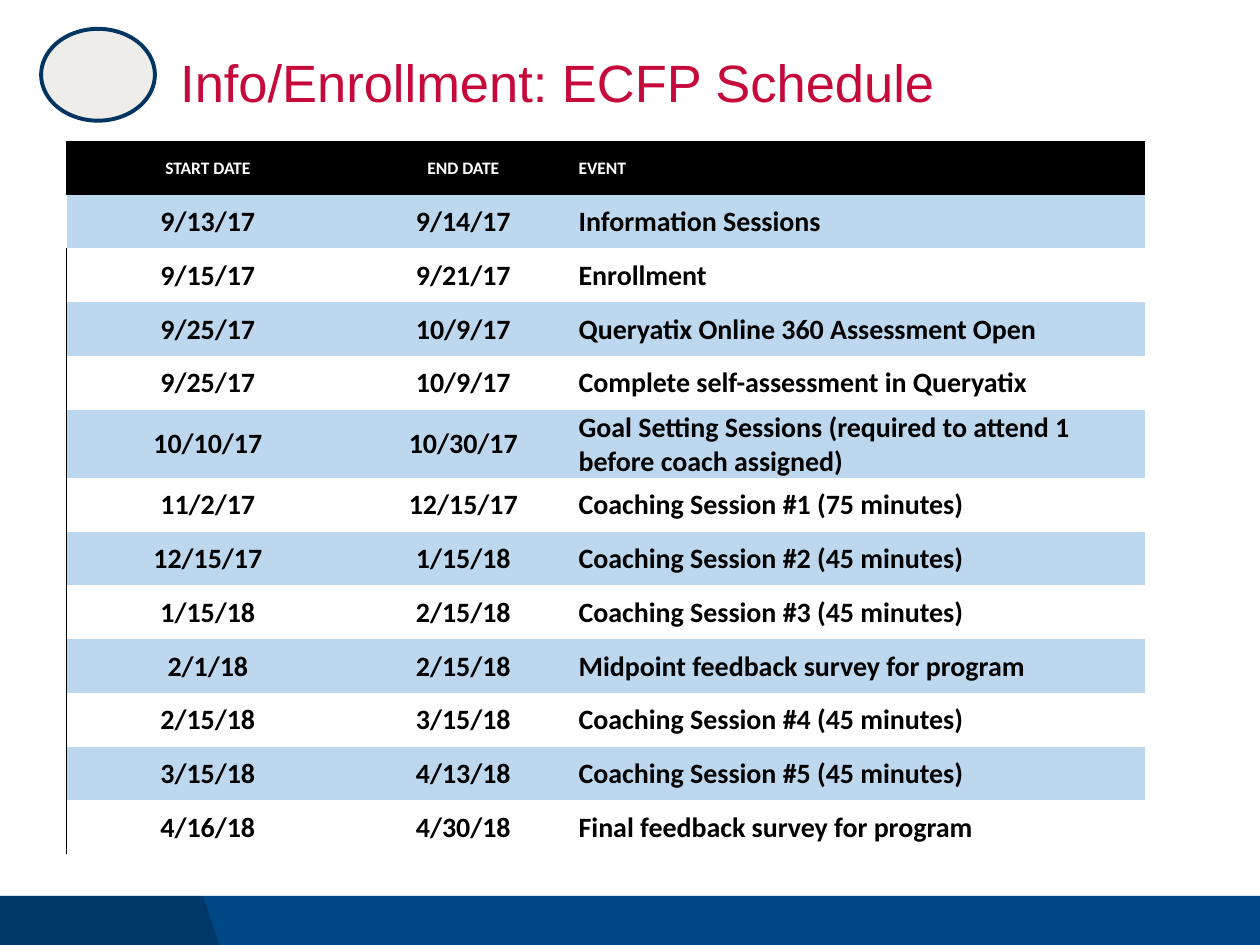
import pptx
import pptx.util
import pptx.dml.color
import pptx.enum.shapes
import pptx.enum.text
import pptx.oxml
import pptx.oxml.ns
from dataclasses import dataclass
from lxml import etree

Pt = pptx.util.Pt
Shape = pptx.enum.shapes.MSO_SHAPE
Align = pptx.enum.text.PP_ALIGN
Anchor = pptx.enum.text.MSO_ANCHOR
qn = pptx.oxml.ns.qn
PLAIN = "{2D5ABB26-0587-4C30-8999-92F81FD0307C}"  # no style, no grid


@dataclass(frozen=True)
class Theme:
    red: str = "C5093B"
    blue: str = "004785"
    navy: str = "003562"
    pale: str = "BDD7EE"
    cream: str = "EEEDEA"
    black: str = "000000"
    white: str = "FFFFFF"
    title: float = 30
    head: float = 10
    body: float = 16


def rgb(code):
    return pptx.dml.color.RGBColor.from_string(code)


def write(frame, text, *, size, color, font, bold=False, align=Align.LEFT, space=1.0):
    para = frame.paragraphs[0]
    para.alignment = align
    para.line_spacing = space
    run = para.add_run()
    run.text = text
    run.font.name = font
    run.font.size = Pt(size)
    run.font.bold = bold
    run.font.color.rgb = rgb(color)


class Deck:
    def __init__(self, theme, wide, high):
        self.theme = theme
        self.file = pptx.Presentation()
        self.file.slide_width, self.file.slide_height = Pt(wide), Pt(high)
        self.slide = self.file.slides.add_slide(self.file.slide_layouts[6])

    def paint(self, shape, fill, line=None, width=0, alpha=None):
        shape.shadow.inherit = False
        shape.fill.solid()
        shape.fill.fore_color.rgb = rgb(fill)
        if alpha is not None:
            tint = shape.fill._xPr.find(".//" + qn("a:srgbClr"))
            etree.SubElement(tint, qn("a:alpha"), val=str(alpha * 1000))
        if line:
            shape.line.color.rgb = rgb(line)
            shape.line.width = Pt(width)
        else:
            shape.line.fill.background()

    def shape(self, kind, box, fill, **look):
        item = self.slide.shapes.add_shape(kind, *map(Pt, box))
        self.paint(item, fill, **look)

    def outline(self, dots, fill, **look):
        first, *rest = [(Pt(x), Pt(y)) for x, y in dots]
        form = self.slide.shapes.build_freeform(*first)
        form.add_line_segments(rest, close=True)
        self.paint(form.convert_to_shape(), fill, **look)

    def text(self, box, words, **style):
        frame = self.slide.shapes.add_textbox(*map(Pt, box)).text_frame
        frame.word_wrap = True
        frame.margin_left = frame.margin_right = 0
        frame.vertical_anchor = Anchor.MIDDLE
        write(frame, words, **style)

    def edge(self, cell, color, width):
        line = etree.Element(qn("a:lnL"), w=str(Pt(width)))
        fill = etree.SubElement(line, qn("a:solidFill"))
        etree.SubElement(fill, qn("a:srgbClr"), val=color)
        cell._tc.get_or_add_tcPr().insert(0, line)

    def table(self, left, top, cols, high, rows):
        look = self.theme
        grid = self.slide.shapes.add_table(
            len(rows), len(cols), Pt(left), Pt(top), Pt(sum(cols)), Pt(high * len(rows))
        ).table
        grid.horz_banding = False
        grid._tbl.tblPr.find(qn("a:tableStyleId")).text = PLAIN
        for col, wide in zip(grid.columns, cols):
            col.width = Pt(wide)
        for r, row in enumerate(rows):
            grid.rows[r].height = Pt(high)
            for c, words in enumerate(row):
                cell = grid.cell(r, c)
                cell.vertical_anchor = Anchor.MIDDLE
                cell.margin_left = cell.margin_right = cell.margin_top = Pt(0.7)
                cell.margin_bottom = 0
                # Black header, then pale and clear rows in turn
                if r == 0 or r % 2:
                    cell.fill.solid()
                    cell.fill.fore_color.rgb = rgb(look.pale if r else look.black)
                else:
                    cell.fill.background()
                if c == 0 and r != 1:
                    self.edge(cell, look.black, 1)
                write(
                    cell.text_frame, words, font="Calibri", bold=True,
                    size=look.body if r else look.head,
                    color=look.black if r else look.white,
                    align=Align.LEFT if c == 2 else Align.CENTER,
                )


ROWS = [
    ("START DATE", "END DATE", "EVENT"),
    ("9/13/17", "9/14/17", "Information Sessions"),
    ("9/15/17", "9/21/17", "Enrollment"),
    ("9/25/17", "10/9/17", "Queryatix Online 360 Assessment Open"),
    ("9/25/17", "10/9/17", "Complete self-assessment in Queryatix"),
    ("10/10/17", "10/30/17",
     "Goal Setting Sessions (required to attend 1 before coach assigned)"),
    ("11/2/17", "12/15/17", "Coaching Session #1 (75 minutes)"),
    ("12/15/17", "1/15/18", "Coaching Session #2 (45 minutes)"),
    ("1/15/18", "2/15/18", "Coaching Session #3 (45 minutes)"),
    ("2/1/18", "2/15/18", "Midpoint feedback survey for program"),
    ("2/15/18", "3/15/18", "Coaching Session #4 (45 minutes)"),
    ("3/15/18", "4/13/18", "Coaching Session #5 (45 minutes)"),
    ("4/16/18", "4/30/18", "Final feedback survey for program"),
]


def main():
    theme = Theme()
    deck = Deck(theme, 720, 540)

    # Footer band with its darker slanted end
    deck.shape(Shape.RECTANGLE, (0, 512, 720, 30), theme.blue)
    deck.outline([(0, 512), (116, 512), (126, 542), (0, 542)], theme.black, alpha=20)

    # Title and the oval beside it
    deck.text((103, 29, 551.5, 40), "Info/Enrollment: ECFP Schedule",
              size=theme.title, color=theme.red, font="Arial", space=0.9)
    deck.shape(Shape.OVAL, (23.5, 16.5, 65, 52.5), theme.cream, line=theme.navy, width=2.25)

    # Schedule
    deck.table(38, 80.5, (161.5, 130.5, 324.5), 30.7, ROWS)

    deck.file.save("out.pptx")


if __name__ == "__main__":
    main()
